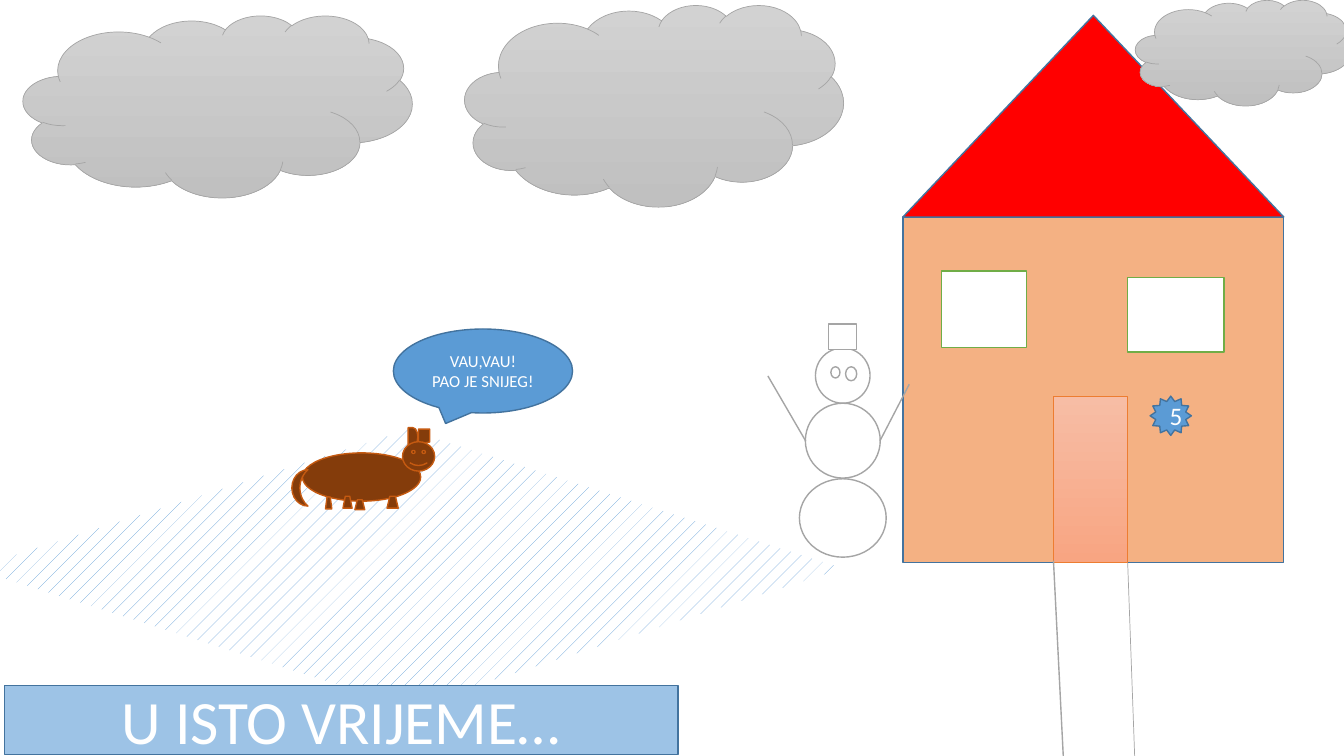
import pptx
import pptx.util
import pptx.dml.color
import pptx.enum.dml
import pptx.enum.shapes
import pptx.enum.text
import lxml.etree

Pt = pptx.util.Pt
Kind = pptx.enum.shapes.MSO_SHAPE

# Looks: fill (hex, two-stop tuple or hatch dict), line, line width
LOOKS = {
    "wall": ("F4B183", "43739E", 1),
    "roof": ("FF0000", "43739E", 1),
    "window": ("FFFFFF", "70AD47", 1),
    "door": (("F7BDA5", "F8A582"), "ED7D31", 0.5),
    "snow": ("FFFFFF", "A5A5A5", 1),
    "cloud": (("D2D2D2", "C0C0C0"), "A5A5A5", 0.5),
    "field": ({"fore": "5B9BD5", "back": "FFFFFF"}, None, 0),
    "dog": ("843C0B", "C55A11", 1),
    "blue": ("5B9BD5", "43739E", 1),
    "title": ("9DC3E6", "43739E", 1),
}

# Shapes: kind, look, left, top, width, height
HOUSE = [
    (Kind.RECTANGLE, "wall", 645, 155, 272, 247),
    (Kind.ISOSCELES_TRIANGLE, "roof", 645, 11, 272, 144),
    (Kind.RECTANGLE, "window", 672.5, 193.5, 61, 55),
    (Kind.RECTANGLE, "window", 805.5, 198, 69, 53.5),
    (Kind.RECTANGLE, "door", 752.5, 283, 53, 119),
]
PATH = [(805.5, 402, 810.5, 540, 0.5), (752.5, 400.5, 759.5, 540, 1)]

# Snowman balls share one centre line: top, width, height
MID = 602
BALLS = [(342, 62, 56), (248.5, 39, 39.5), (288, 53.5, 53.5)]
HAT = (Kind.RECTANGLE, "snow", 592, 231.5, 20, 18)
ARMS = [(575.5, 315, 548.5, 268.5, 1), (628.5, 315, 649.5, 274.5, 1)]
EYES = [(Kind.OVAL, "snow", 593.5, 262, 6.5, 8),
        (Kind.OVAL, "snow", 604, 262, 8, 10)]

CLOUDS = [(16.5, 11, 278, 130), (332, 3.5, 270.5, 144), (811, 0, 154, 75.5)]
FIELD = (Kind.FLOWCHART_DECISION, "field", -19.5, 307, 622, 198)

# Dog legs: left, top, width, height
LEGS = [(232.5, 355, 4.5, 8.5), (276.5, 354.5, 8, 8.5),
        (253.5, 357, 7, 7), (245, 354.5, 6.5, 8.5)]
BODY = (Kind.OVAL, "dog", 216, 323.5, 84.5, 34.5)
HEAD = [
    (Kind.FLOWCHART_DELAY, "dog", 291.5, 305.5, 7, 13),
    (Kind.FLOWCHART_DOCUMENT, "dog", 299, 306.5, 8, 11.5),
    (Kind.SMILEY_FACE, "dog", 287.5, 315.5, 23, 21),
    (Kind.MOON, "dog", 208.5, 335.5, 11.5, 26),
]

# Shapes with text: shape, size, lines
NUMBER = ((Kind.STAR_12_POINT, "blue", 821.5, 283, 29.5, 28), 18, ["5"])
SPEECH = ((Kind.OVAL_CALLOUT, "blue", 281, 235, 128, 60), 12,
          ["VAU,VAU!", "PAO JE SNIJEG!"])
TITLE = ((Kind.MATH_MINUS, "title", -83.5, 409.5, 654.5, 209.5), 44,
         ["U ISTO VRIJEME…"])

FRAME = {"word_wrap": True,
         "vertical_anchor": pptx.enum.text.MSO_ANCHOR.MIDDLE}


def color(code):
    return pptx.dml.color.RGBColor.from_string(code)


def assign(item, values):
    for name, value in values.items():
        setattr(item, name, value)


def paint(fill, tone):
    if isinstance(tone, tuple):
        fill.gradient()
        fill.gradient_angle = 270
        for stop, code in zip(fill.gradient_stops, tone):
            stop.color.rgb = color(code)
    elif isinstance(tone, dict):
        fill.patterned()
        fill.pattern = pptx.enum.dml.MSO_PATTERN.PERCENT_5
        fill.fore_color.rgb = color(tone["fore"])
        fill.back_color.rgb = color(tone["back"])
    else:
        fill.solid()
        fill.fore_color.rgb = color(tone)


def draw(home, kind, look, *box):
    tone, edge, width = LOOKS[look]
    shape = home.add_shape(kind, *map(Pt, box))
    shape.shadow.inherit = False
    paint(shape.fill, tone)
    if edge:
        shape.line.color.rgb = color(edge)
        shape.line.width = Pt(width)
    else:
        shape.line.fill.background()
    return shape


def stroke(home, *ends):
    *spots, width = ends
    line = home.add_connector(pptx.enum.shapes.MSO_CONNECTOR.STRAIGHT,
                              *map(Pt, spots))
    line.line.color.rgb = color("A5A5A5")
    line.line.width = Pt(width)
    lxml.etree.SubElement(line.element.spPr,
                          pptx.oxml.ns.qn("a:effectLst"))


def label(home, item, size, lines):
    frame = draw(home, *item).text_frame
    assign(frame, FRAME)
    for row, text in enumerate(lines):
        para = frame.add_paragraph() if row else frame.paragraphs[0]
        para.alignment = pptx.enum.text.PP_ALIGN.CENTER
        run = para.add_run()
        run.text = text
        assign(run.font, {"name": "Calibri", "size": Pt(size)})
        run.font.color.rgb = color("FFFFFF")


def main():
    deck = pptx.Presentation()
    assign(deck, {"slide_width": Pt(960), "slide_height": Pt(540)})
    page = deck.slides.add_slide(deck.slide_layouts[6]).shapes

    # House and path
    house = page.add_group_shape().shapes
    for item in HOUSE:
        draw(house, *item)
    for ends in PATH:
        stroke(page, *ends)

    # Snowman
    snowman = page.add_group_shape().shapes
    for top, width, height in BALLS:
        draw(snowman, Kind.OVAL, "snow", MID - width / 2, top, width, height)
    draw(snowman, *HAT)
    for ends in ARMS:
        stroke(snowman, *ends)
    for item in EYES:
        draw(page, *item)

    # House number, clouds and snowy field
    label(page, *NUMBER)
    for box in CLOUDS:
        draw(page, Kind.CLOUD, "cloud", *box)
    draw(page, *FIELD)

    # Dog
    dog = page.add_group_shape().shapes
    draw(dog, *BODY)
    for box in LEGS:
        draw(dog, Kind.TRAPEZOID, "dog", *box)
    for item in HEAD:
        draw(dog, *item)

    # Speech and title
    label(page, *SPEECH)
    label(page, *TITLE)
    deck.save("out.pptx")


if __name__ == "__main__":
    main()
